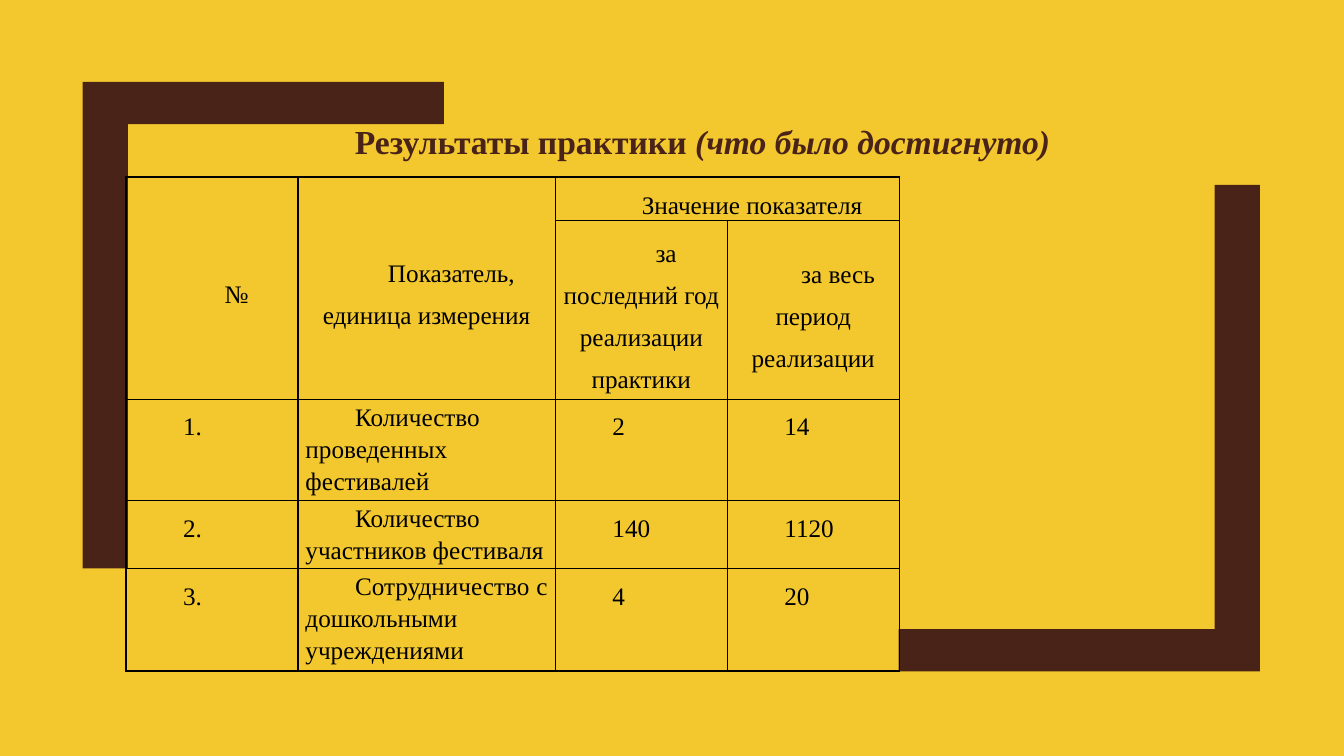
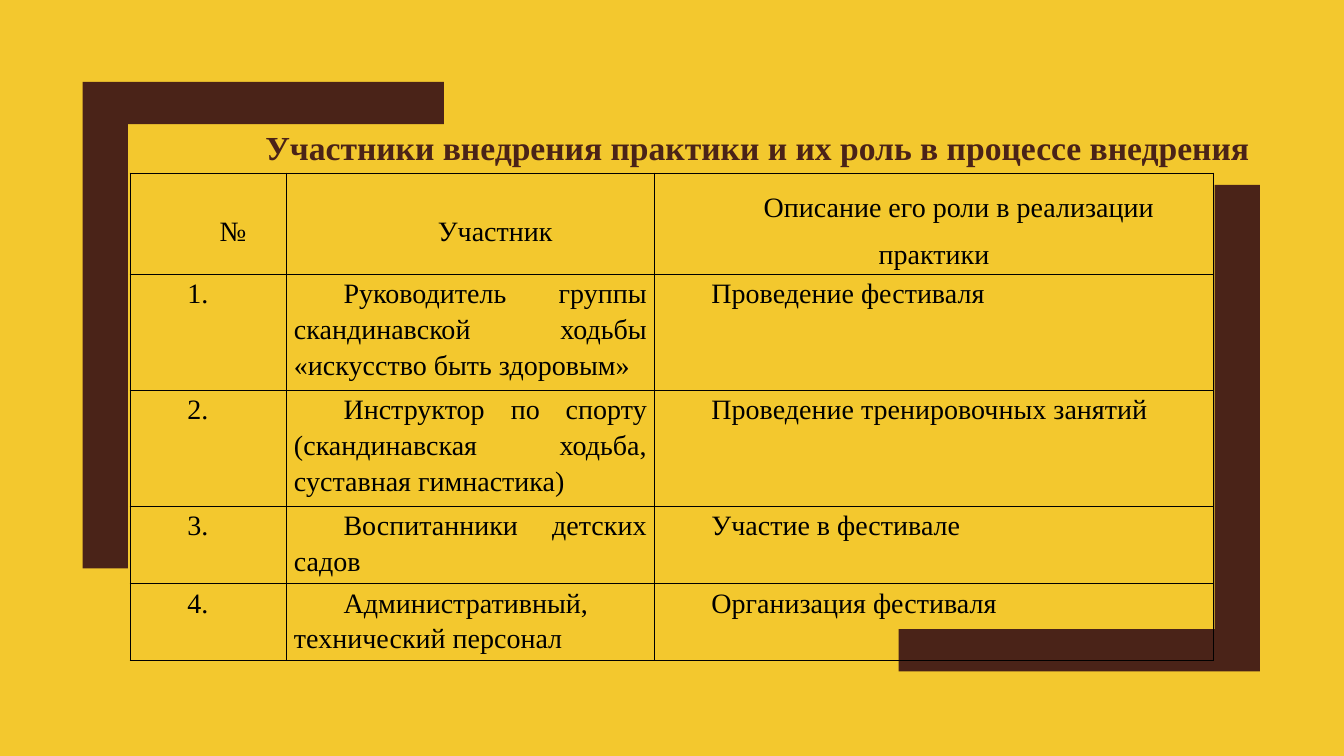
from lxml import etree
from pptx import Presentation
from pptx.dml.color import RGBColor
from pptx.enum import text
from pptx.oxml import ns
from pptx.util import Pt

YELLOW = RGBColor(0xF3, 0xC8, 0x2E)
BROWN = RGBColor(0x4A, 0x23, 0x18)
BLACK = RGBColor(0, 0, 0)
FONT = "Times New Roman"
FIRST_LINE_INDENT = Pt(35.4)

# The second bracket is the first one turned by half a circle.
LEFT_BRACKET = [(91.4, 406), (59, 406), (59, 58.5), (317, 58.5), (317, 88.7), (91.4, 88.7)]
RIGHT_BRACKET = [(959 - x, 538 - y) for x, y in LEFT_BRACKET]

PAGES = [
    {
        "title": [("Результаты практики ", False), ("(что было достигнуто)", True)],
        "title_box": (211, 83, 558, 36),
        "table_corner": (90, 126.4),
        "columns": [122.8, 183.9, 122.8, 122.8],
        "heights": [31.4, 127.6, 72.4, 48.6, 72.9],
        "header_rows": 2,
        "merges": [(0, 0, 1, 0), (0, 1, 1, 1), (0, 2, 0, 3)],
        "size": 18,
        "number_spacing": 1.5,
        "rows": [
            ["№", "Показатель, единица измерения", "Значение показателя", ""],
            ["", "", "за последний год реализации практики", "за весь период реализации"],
            ["1.", "Количество проведенных фестивалей", "2", "14"],
            ["2.", "Количество участников фестиваля", "140", "1120"],
            ["3.", "Сотрудничество с дошкольными учреждениями", "4", "20"],
        ],
    },
    {
        "title": [("Участники внедрения практики и их роль в процессе внедрения", False)],
        "title_box": (147, 87, 761, 36),
        "table_corner": (93, 123.8),
        "columns": [111.6, 262.8, 399.6],
        "heights": [66, 76.6, 76.6, 51, 51],
        "header_rows": 1,
        "merges": [],
        "size": 20,
        "number_spacing": 1.15,
        "rows": [
            ["№", "Участник", "Описание его роли в реализации практики"],
            ["1.", "Руководитель группы скандинавской ходьбы «искусство быть здоровым»",
             "Проведение фестиваля"],
            ["2.", "Инструктор по спорту (скандинавская ходьба, суставная гимнастика)",
             "Проведение тренировочных занятий"],
            ["3.", "Воспитанники детских садов", "Участие в фестивале"],
            ["4.", "Административный, технический персонал", "Организация фестиваля"],
        ],
    },
]


def add_run(paragraph, words, size, color, bold=False, italic=False):
    paragraph._p.get_or_add_pPr().set("indent", str(FIRST_LINE_INDENT))
    run = paragraph.add_run()
    run.text = words
    run.font.name = FONT
    run.font.size = Pt(size)
    run.font.bold = bold
    run.font.italic = italic
    run.font.color.rgb = color


def add_borders(cell):
    """Draw thin black lines on all four sides of a cell without a fill."""
    cell.fill.background()
    properties = cell._tc.get_or_add_tcPr()
    for position, side in enumerate(("lnL", "lnR", "lnT", "lnB")):
        line = etree.Element(ns.qn(f"a:{side}"), w=str(Pt(1)))
        fill = etree.SubElement(line, ns.qn("a:solidFill"))
        etree.SubElement(fill, ns.qn("a:srgbClr"), val=str(BLACK))
        properties.insert(position, line)


presentation = Presentation()
presentation.slide_width = Pt(960)
presentation.slide_height = Pt(540)
background = presentation.slide_master.background.fill
background.solid()
background.fore_color.rgb = YELLOW

for page in PAGES:
    slide = presentation.slides.add_slide(presentation.slide_layouts[6])

    for outline in (RIGHT_BRACKET, LEFT_BRACKET):
        points = [(Pt(x), Pt(y)) for x, y in outline]
        builder = slide.shapes.build_freeform(*points[0])
        builder.add_line_segments(points[1:], close=True)
        bracket = builder.convert_to_shape()
        bracket.shadow.inherit = False
        bracket.fill.solid()
        bracket.fill.fore_color.rgb = BROWN
        bracket.line.fill.background()

    left, top = page["table_corner"]
    columns, heights = page["columns"], page["heights"]
    table = slide.shapes.add_table(
        len(heights), len(columns), Pt(left), Pt(top), Pt(sum(columns)), Pt(sum(heights))
    ).table
    table.first_row = False
    table.horz_banding = False
    for column, width in zip(table.columns, columns):
        column.width = Pt(width)
    for row, height in zip(table.rows, heights):
        row.height = Pt(height)
    for first_row, first_column, last_row, last_column in page["merges"]:
        table.cell(first_row, first_column).merge(table.cell(last_row, last_column))

    for row_index, row_words in enumerate(page["rows"]):
        is_header = row_index < page["header_rows"]
        for column_index, words in enumerate(row_words):
            cell = table.cell(row_index, column_index)
            add_borders(cell)
            cell.margin_left = cell.margin_right = Pt(5.4)
            cell.margin_top = cell.margin_bottom = 0
            if not words:
                continue
            paragraph = cell.text_frame.paragraphs[0]
            if is_header:
                cell.vertical_anchor = text.MSO_ANCHOR.MIDDLE
                paragraph.alignment = text.PP_ALIGN.CENTER
                paragraph.line_spacing = 1.5
            elif column_index == 1:
                paragraph.alignment = text.PP_ALIGN.JUSTIFY
                paragraph.line_spacing = 1.15
            else:
                paragraph.alignment = text.PP_ALIGN.LEFT
                paragraph.line_spacing = page["number_spacing"]
            add_run(paragraph, words, page["size"], BLACK)

    title = slide.shapes.add_textbox(*map(Pt, page["title_box"])).text_frame
    title.word_wrap = True
    title.vertical_anchor = text.MSO_ANCHOR.MIDDLE
    for words, italic in page["title"]:
        add_run(title.paragraphs[0], words, 24, BROWN, bold=True, italic=italic)

presentation.save("out.pptx")
